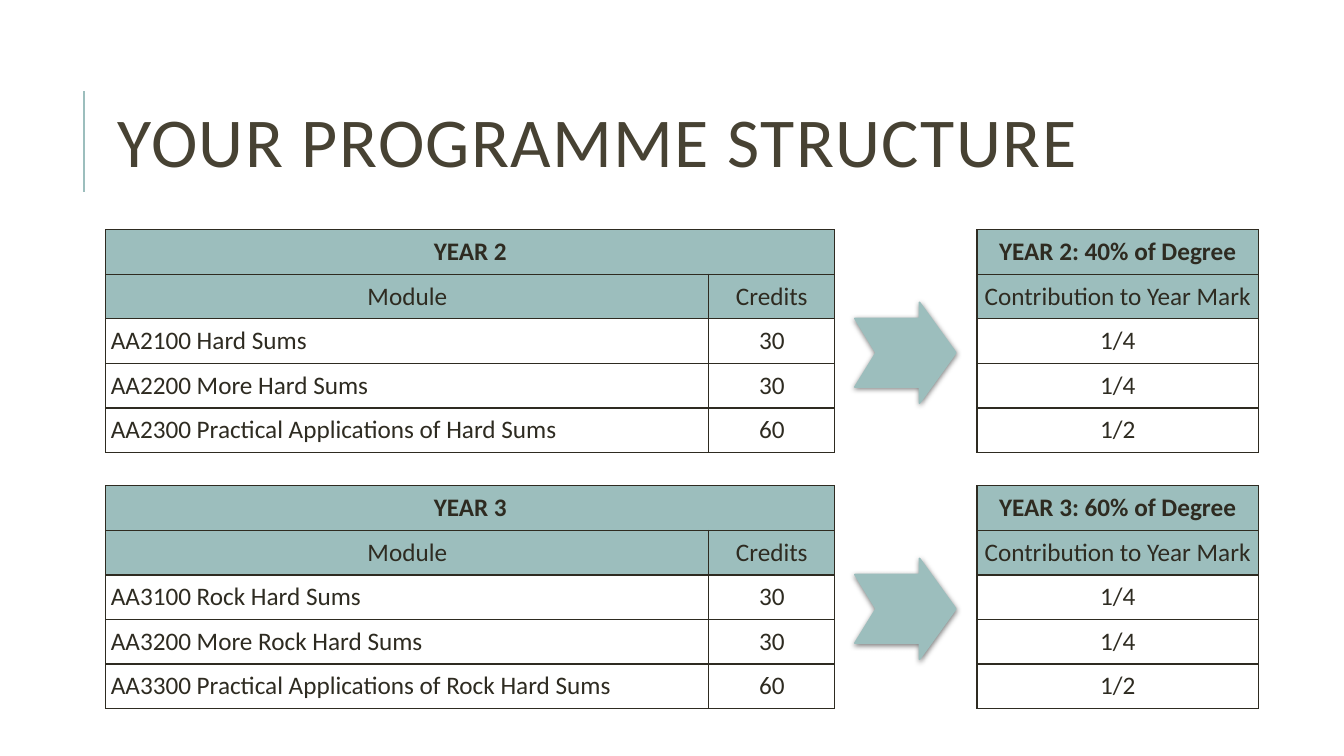
from lxml import etree
from pptx import Presentation
from pptx.dml.color import RGBColor
from pptx.enum.shapes import MSO_CONNECTOR
from pptx.enum.text import MSO_ANCHOR, PP_ALIGN
from pptx.oxml import parse_xml
from pptx.oxml.ns import nsdecls, qn
from pptx.util import Inches, Pt

TEAL = RGBColor(0x9C, 0xBE, 0xBD)
BROWN = RGBColor(0x47, 0x42, 0x33)
INK = RGBColor(0x2E, 0x2B, 0x21)
LEFT, CENTER = PP_ALIGN.LEFT, PP_ALIGN.CENTER
MIDDLE = MSO_ANCHOR.MIDDLE
STRAIGHT = MSO_CONNECTOR.STRAIGHT


def write(frame, text, size=18, color=INK, bold=False, align=CENTER):
    para = frame.paragraphs[0]
    para.alignment = align
    run = para.add_run()
    run.text = text
    run.font.name = "Calibri"
    run.font.size = Pt(size)
    run.font.bold = bold
    run.font.color.rgb = color
    return run


def grid(left, top, widths, rows):
    frame = slide.shapes.add_table(
        len(rows), len(widths), Inches(left), Inches(top),
        Inches(sum(widths)), Inches(2.21))
    table = frame.table
    table.first_row = table.horz_banding = False
    for col, width in zip(table.columns, widths):
        col.width = Inches(width)
    for r, row in enumerate(rows):
        for c, text in enumerate(row):
            cell = table.cell(r, c)
            body = r > 1
            name = body and len(row) > 1 and c == 0
            cell.margin_left = Inches(0.05 if name else 0)
            cell.margin_right = cell.margin_top = cell.margin_bottom = 0
            cell.vertical_anchor = MIDDLE
            if text:
                write(cell.text_frame, text, bold=r == 0,
                      align=LEFT if name else CENTER)
            for side in "LRTB":
                cell._tc.get_or_add_tcPr().append(parse_xml(
                    f'<a:ln{side} {nsdecls("a")} w="{Pt(1)}"><a:solidFill>'
                    f'<a:srgbClr val="{INK}"/></a:solidFill></a:ln{side}>'))
            if body:
                cell.fill.background()
            else:
                cell.fill.solid()
                cell.fill.fore_color.rgb = TEAL
    if len(widths) > 1:
        table.cell(0, 0).merge(table.cell(0, 1))


deck = Presentation()
deck.slide_width = Inches(13.33)
deck.slide_height = Inches(7.5)
slide = deck.slides.add_slide(deck.slide_layouts[5])

rule = slide.shapes.add_connector(
    STRAIGHT, Inches(0.83), Inches(1.9), Inches(0.83), Inches(0.9))
rule.line.color.rgb = TEAL
rule.line.width = Pt(1.5)
etree.SubElement(rule._element.spPr, qn("a:effectLst"))

title = slide.shapes.title
title.left, title.top = Inches(1.12), Inches(0.64)
title.width, title.height = Inches(10.63), Inches(1.64)
frame = title.text_frame
frame.word_wrap = True
frame.vertical_anchor = MIDDLE
frame.margin_left = frame.margin_right = Inches(0.05)
frame.margin_top = frame.margin_bottom = Inches(0.05)
head = write(frame, "YOUR PROGRAMME STRUCTURE", size=50, color=BROWN, align=LEFT)
head.font._element.set("spc", "100")
frame.paragraphs[0].line_spacing = 0.8

YEARS = [
    (2.28, "YEAR 2", "40%", ["AA2100 Hard Sums", "AA2200 More Hard Sums",
                             "AA2300 Practical Applications of Hard Sums"]),
    (4.82, "YEAR 3", "60%", ["AA3100 Rock Hard Sums", "AA3200 More Rock Hard Sums",
                             "AA3300 Practical Applications of Rock Hard Sums"]),
]
CREDITS = ["30", "30", "60"]
MARKS = ["1/4", "1/4", "1/2"]
ARROW = [(9.12, -0.5), (9.12, -0.34), (8.48, -0.34), (8.69, 0),
         (8.48, 0.34), (9.12, 0.34), (9.12, 0.5)]

for top, year, share, names in YEARS:
    grid(1.05, top, [5.98, 1.25],
         [(year, ""), ("Module", "Credits"), *zip(names, CREDITS)])
    grid(9.69, top, [2.79],
         [(f"{year}: {share} of Degree",), ("Contribution to Year Mark",),
          *zip(MARKS)])

    mid = top + 1.22
    edge = slide.shapes.build_freeform(Inches(9.48), Inches(mid))
    edge.add_line_segments([(Inches(x), Inches(mid + y)) for x, y in ARROW])
    arrow = edge.convert_to_shape()
    arrow.fill.solid()
    arrow.fill.fore_color.rgb = TEAL
    arrow.line.color.rgb = TEAL
    arrow.line.width = Pt(1.25)
    arrow._element.spPr.append(parse_xml(
        f'<a:effectLst {nsdecls("a")}><a:outerShdw blurRad="{Pt(4)}" '
        f'dist="{Pt(1)}" dir="5400000" rotWithShape="0"><a:srgbClr val="000000">'
        '<a:alpha val="50000"/></a:srgbClr></a:outerShdw></a:effectLst>'))

deck.save("out.pptx")
